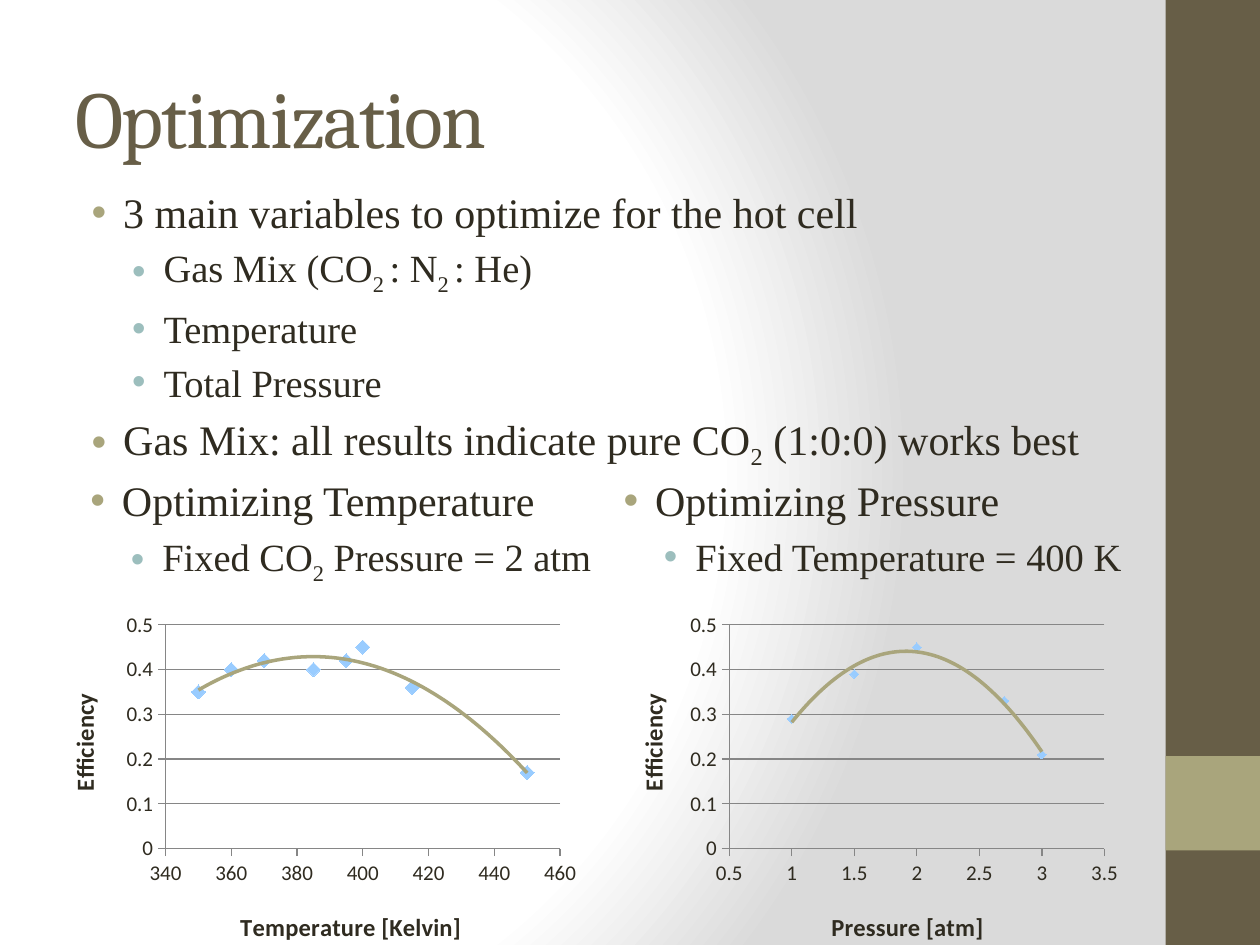
from lxml import etree
from pptx import Presentation
from pptx import util as u
from pptx.chart.data import XyChartData
from pptx.dml.color import RGBColor
from pptx.enum import chart as ch, shapes, text
from pptx.oxml import parse_xml
from pptx.oxml.ns import nsdecls, qn

BROWN = RGBColor(0x67, 0x5E, 0x47)
OLIVE = RGBColor(0xA9, 0xA5, 0x7C)
TEAL = RGBColor(0x9C, 0xBE, 0xBD)
INK = RGBColor(0x2F, 0x2B, 0x20)
SKY = RGBColor(0x99, 0xCC, 0xFF)
GRAY = RGBColor(0x86, 0x86, 0x86)


def add_list(box, items):
    """Fill box with bullets: (level, text) pairs, where text between | marks is subscript."""
    frame = box.text_frame
    frame.word_wrap = True
    for i, (level, line) in enumerate(items):
        para = frame.add_paragraph() if i else frame.paragraphs[0]
        para.level = level
        props = para._p.get_or_add_pPr()
        props.set("marL", str(u.Inches((0.38, 0.7)[level])))
        props.set("indent", str(u.Inches(-0.25)))
        gap = etree.SubElement(props, qn("a:spcBef"))
        etree.SubElement(gap, qn("a:spcPct")).set("val", "20000")
        tint = etree.SubElement(props, qn("a:buClr"))
        etree.SubElement(tint, qn("a:srgbClr")).set("val", str((OLIVE, TEAL)[level]))
        etree.SubElement(props, qn("a:buFont")).set("typeface", "Arial")
        etree.SubElement(props, qn("a:buChar")).set("char", "•")
        for j, part in enumerate(line.split("|")):
            run = para.add_run()
            run.text = part
            run.font.name = "Times New Roman"
            run.font.size = u.Pt((24, 22)[level])
            run.font.color.rgb = INK
            if j % 2:
                run._r.get_or_add_rPr().set("baseline", "-25000")


def set_layout(parent, index, **values):
    """Place a chart part by hand, in fractions of the chart."""
    layout = parent.find(qn("c:layout"))
    if layout is None:
        layout = etree.Element(qn("c:layout"))
        parent.insert(index, layout)
    manual = etree.SubElement(layout, qn("c:manualLayout"))
    for tag, value in values.items():
        etree.SubElement(manual, qn("c:" + tag)).set("val", str(value))


prs = Presentation()
prs.slide_width, prs.slide_height = u.Inches(10), u.Inches(7.5)
slide = prs.slides.add_slide(prs.slide_layouts[6])

# Background
fill = slide.background.fill
fill.gradient()
old = slide._element.find(".//" + qn("a:gradFill"))
stops = "".join(
    f'<a:gs pos="{pos}000"><a:srgbClr val="{color}"/></a:gs>'
    for pos, color in ((0, "FFFFFF"), (75, "FFFFFF"), (100, "DADADA")))
old.getparent().replace(old, parse_xml(
    f'<a:gradFill {nsdecls("a")} rotWithShape="1"><a:gsLst>{stops}</a:gsLst>'
    '<a:path path="circle"><a:fillToRect l="20000" t="50000" r="100000" b="50000"/>'
    '</a:path></a:gradFill>'))

# Side band
for top, height, color in ((0, 7.5, BROWN), (6, 0.75, OLIVE)):
    band = slide.shapes.add_shape(
        shapes.MSO_SHAPE.RECTANGLE,
        u.Inches(9.25), u.Inches(top), u.Inches(0.75), u.Inches(height))
    band.shadow.inherit = False
    band.fill.solid()
    band.fill.fore_color.rgb = color
    band.line.fill.background()

# Title
title = slide.shapes.add_textbox(
    u.Inches(0.5), u.Inches(0.3), u.Inches(8.33), u.Inches(1.25))
frame = title.text_frame
frame.word_wrap = True
frame.vertical_anchor = text.MSO_ANCHOR.MIDDLE
run = frame.paragraphs[0].add_run()
run.text = "Optimization"
run.font.name = "Cambria"
run.font.size = u.Pt(46)
run.font.color.rgb = BROWN
run._r.get_or_add_rPr().set("spc", "-100")

# Bullets
body = slide.shapes.add_textbox(
    u.Inches(0.5), u.Inches(1.43), u.Inches(8.33), u.Inches(2.39))
add_list(body, [
    (0, "3 main variables to optimize for the hot cell"),
    (1, "Gas Mix (CO|2 |: N|2 |: He)"),
    (1, "Temperature"),
    (1, "Total Pressure"),
    (0, "Gas Mix: all results indicate pure CO|2| (1:0:0) works best"),
])
pair = slide.shapes.add_textbox(
    u.Inches(0.49), u.Inches(3.72), u.Inches(8.66), u.Inches(0.99))
add_list(pair, [
    (0, "Optimizing Temperature"),
    (1, "Fixed CO|2| Pressure = 2 atm"),
    (0, "Optimizing Pressure"),
    (1, "Fixed Temperature = 400 K"),
])
pair.text_frame._txBody.bodyPr.set("numCol", "2")

# Charts: left, width, x title, x title place, (min, max, step), marker size, points
plots = [
    (0.37, 4.29, "Temperature [Kelvin]", 0.35, (340, 460, 20), 8,
     [(350, 0.35), (360, 0.4), (370, 0.42), (385, 0.4),
      (395, 0.42), (400, 0.45), (415, 0.36), (450, 0.17)]),
    (4.89, 4.08, "Pressure [atm]", 0.41, (0.5, 3.5, 0.5), 5,
     [(1, 0.29), (2, 0.45), (2.7, 0.33), (3, 0.21), (1.5, 0.39)]),
]
for left, width, label, place, scale, size, points in plots:
    data = XyChartData()
    series = data.add_series("Series 1")
    for x, y in points:
        series.add_data_point(x, y)
    chart = slide.shapes.add_chart(
        ch.XL_CHART_TYPE.XY_SCATTER, u.Inches(left), u.Inches(4.79),
        u.Inches(width), u.Inches(2.82), data).chart
    chart.has_title = False
    chart.has_legend = False
    chart.font.name = "Calibri"
    chart.font.size = u.Pt(12)
    chart.font.color.rgb = INK
    plot = chart.plots[0]
    plot.vary_by_categories = False
    set_layout(chart._chartSpace.find(".//" + qn("c:plotArea")), 0,
               layoutTarget="inner", xMode="edge", yMode="edge",
               x=0.22, y=0.06, w=0.73, h=0.63)

    dots = plot.series[0]
    dots.format.line.fill.background()
    dots.marker.style = ch.XL_MARKER_STYLE.DIAMOND
    dots.marker.size = size
    dots.marker.format.fill.solid()
    dots.marker.format.fill.fore_color.rgb = SKY
    dots.marker.format.line.fill.background()
    dots._element.find(qn("c:xVal")).addprevious(parse_xml(
        f'<c:trendline {nsdecls("c", "a")}><c:spPr><a:ln w="{u.Pt(2)}"><a:solidFill>'
        f'<a:srgbClr val="{OLIVE}"/></a:solidFill></a:ln></c:spPr>'
        '<c:trendlineType val="poly"/><c:order val="2"/>'
        '<c:dispRSqr val="0"/><c:dispEq val="0"/></c:trendline>'))

    for axis, name, (low, high, step), (x, y) in (
            (chart.category_axis, label, scale, (place, 0.85)),
            (chart.value_axis, "Efficiency", (0, 0.5, 0.1), (0.03, 0.24))):
        axis.minimum_scale, axis.maximum_scale = low, high
        axis.major_unit = step
        axis.major_tick_mark = ch.XL_TICK_MARK.OUTSIDE
        axis.minor_tick_mark = ch.XL_TICK_MARK.NONE
        axis.has_major_gridlines = False
        axis.format.line.color.rgb = GRAY
        axis.format.line.width = u.Pt(0.75)
        axis.tick_labels.number_format = "General"
        axis.tick_labels.number_format_is_linked = False
        head = axis.axis_title
        run = head.text_frame.paragraphs[0].add_run()
        run.text = name
        run.font.size = u.Pt(14)
        run.font.bold = True
        run.font.color.rgb = INK
        set_layout(head._element, 1, xMode="edge", yMode="edge", x=x, y=y)
    turn = head.text_frame._txBody.bodyPr
    turn.set("rot", "-5400000")
    turn.set("vert", "horz")
    chart.value_axis.has_major_gridlines = True
    grid = chart.value_axis.major_gridlines.format.line
    grid.color.rgb = GRAY
    grid.width = u.Pt(0.75)

prs.save("out.pptx")
